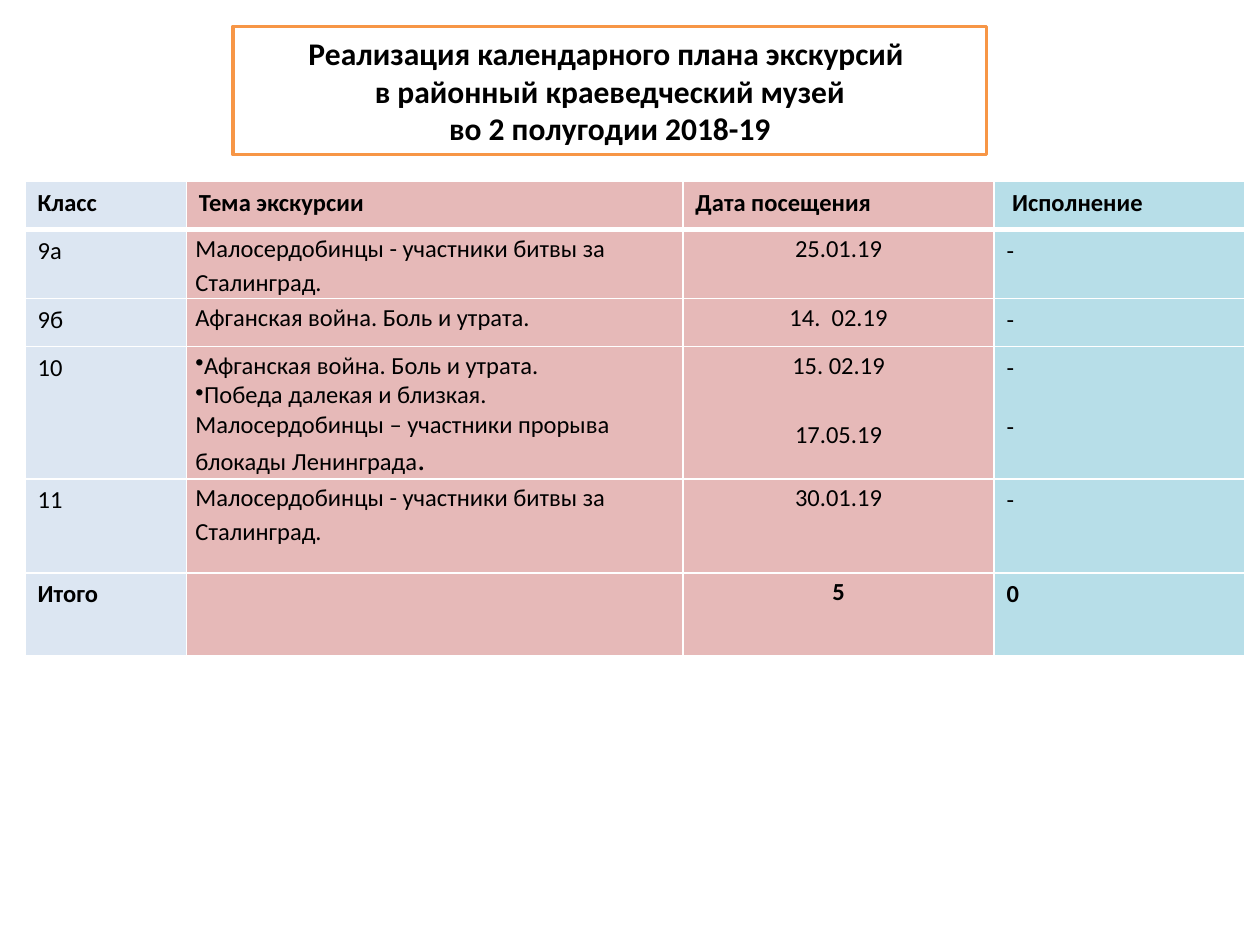
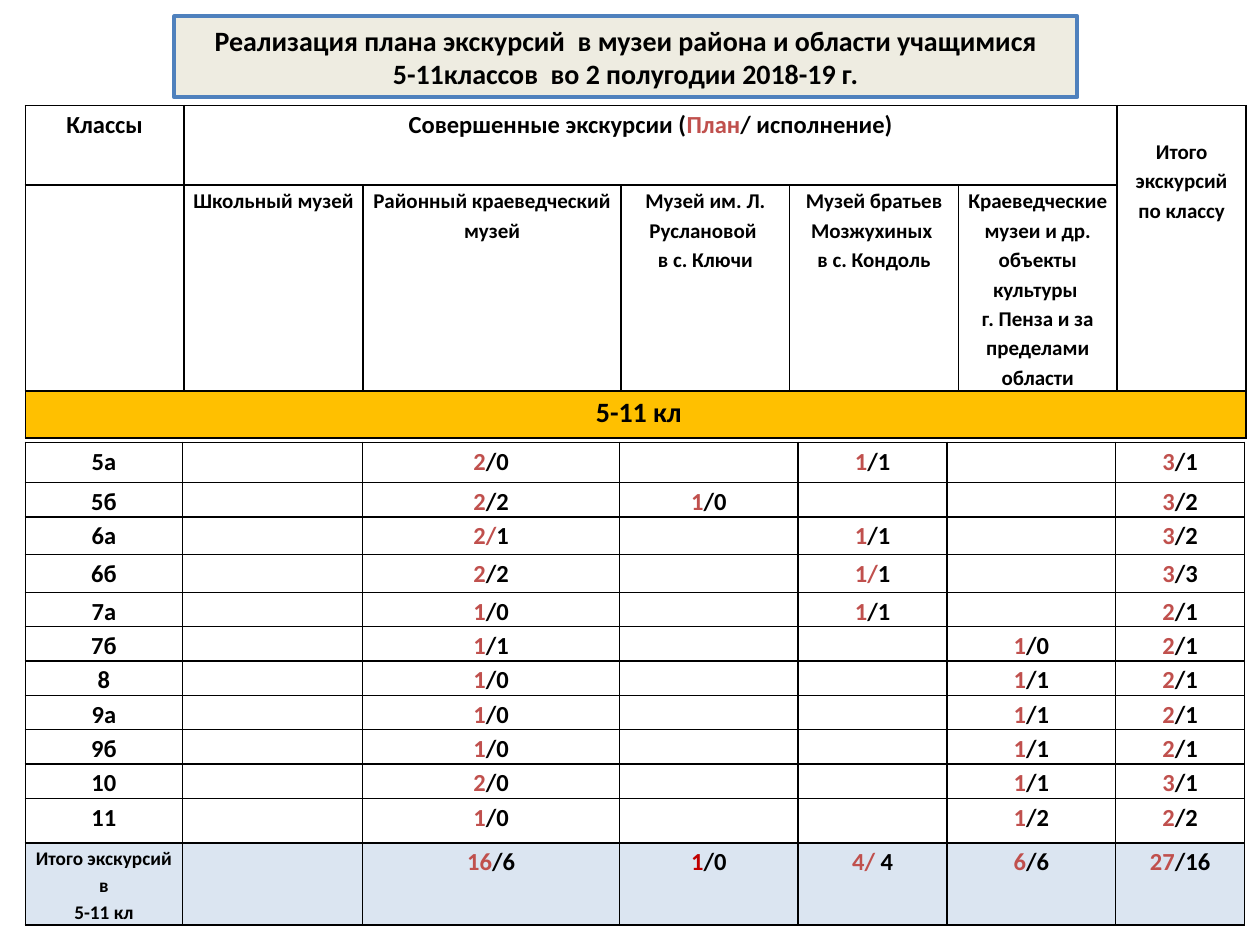
from dataclasses import dataclass

from lxml.etree import SubElement
from pptx import Presentation
from pptx.dml.color import RGBColor as Rgb
from pptx.enum.text import MSO_ANCHOR as Anchor, MSO_AUTO_SIZE as AutoSize, PP_ALIGN as Align
from pptx.oxml.ns import qn
from pptx.util import Cm, Pt


@dataclass(frozen=True)
class Theme:
    font: str = "Calibri"
    ink: str = "000000"
    paper: str = "FFFFFF"
    plan: str = "C0504D"
    plan_strong: str = "C00000"
    orange: str = "F79646"
    blue: str = "4F81BD"
    cream: str = "EEECE1"
    class_fill: str = "DCE6F2"
    visit_fill: str = "E6B9B8"
    done_fill: str = "B7DEE8"
    band_fill: str = "FFC000"
    total_fill: str = "DBE5F1"
    heading: int = 18
    subheading: int = 16
    body: int = 14
    label: int = 12
    small: int = 11


THEME = Theme()
GRID_LEFT = 0.51


def add_heading(slide, box, lines, size, fill, line, line_width):
    title = slide.shapes.title
    for side, length in zip(("left", "top", "width", "height"), box):
        setattr(title, side, Cm(length))
    title.fill.solid()
    title.fill.fore_color.rgb = Rgb.from_string(fill)
    title.line.color.rgb = Rgb.from_string(line)
    title.line.width = Pt(line_width)
    frame = title.text_frame
    frame.text = "\n".join(lines)
    frame.auto_size = AutoSize.NONE
    frame.vertical_anchor = Anchor.MIDDLE
    for paragraph in frame.paragraphs:
        paragraph.alignment = Align.CENTER
        for name, value in {"name": THEME.font, "size": Pt(size), "bold": True}.items():
            setattr(paragraph.font, name, value)
            setattr(paragraph.runs[0].font, name, value)
        paragraph.runs[0].font.color.rgb = Rgb.from_string(THEME.ink)


def add_grid(slide, top, widths, heights, rows, border, style_of):
    """Add a table; style_of(row, column) overrides the cell defaults, and
    text between bars is set in the plan colour."""
    frame = slide.shapes.add_table(len(rows), len(widths), Cm(GRID_LEFT), Cm(top),
                                   Cm(sum(widths)), Cm(sum(heights)))
    grid = frame.table
    grid.first_row = grid.horz_banding = False
    for column, width in zip(grid.columns, widths):
        column.width = Cm(width)
    for row, height in zip(grid.rows, heights):
        row.height = Cm(height)

    for r, texts in enumerate(rows):
        for c, text in enumerate(texts):
            style = {"size": THEME.body, "bold": True, "align": Align.CENTER, "spacing": 1.15,
                     "margins": (0.13, 0, 0.13, 0), "fill": None, "gap": 0,
                     "top_line": 1, "bottom_line": 1} | style_of(r, c)
            cell = grid.cell(r, c)
            for side, margin in zip(("left", "top", "right", "bottom"), style["margins"]):
                setattr(cell, f"margin_{side}", Cm(margin))
            properties = cell._tc.get_or_add_tcPr()
            edges = {"a:lnL": 1, "a:lnR": 1, "a:lnT": style["top_line"], "a:lnB": style["bottom_line"]}
            for tag, width in edges.items():
                edge = SubElement(properties, qn(tag), w=str(Pt(width)))
                SubElement(SubElement(edge, qn("a:solidFill")), qn("a:srgbClr"), val=border)
            if style["fill"]:
                cell.fill.solid()
                cell.fill.fore_color.rgb = Rgb.from_string(style["fill"])
            else:
                cell.fill.background()

            for i, line in enumerate(text.split("\n")):
                paragraph = cell.text_frame.add_paragraph() if i else cell.text_frame.paragraphs[0]
                paragraph.alignment = style["align"]
                paragraph.line_spacing = style["spacing"]
                if i and style["gap"]:
                    paragraph.space_before = Pt(style["gap"])
                if not line:
                    SubElement(paragraph._p, qn("a:endParaRPr"), sz=str(style["size"] * 100))
                    continue
                for part, words in enumerate(line.split("|")):
                    if words:
                        run = paragraph.add_run()
                        run.text = words
                        run.font.color.rgb = Rgb.from_string(THEME.plan if part % 2 else THEME.ink)
                        for name, value in {"name": THEME.font, "size": Pt(style["size"]),
                                            "bold": style["bold"]}.items():
                            setattr(run.font, name, value)
    return grid


deck = Presentation()
deck.slide_width, deck.slide_height = Cm(25.4), Cm(19.05)
title_only = deck.slide_layouts[5]

# Slide 1: visits to the district museum
district = deck.slides.add_slide(title_only)
add_heading(district, (4.7, 0.53, 15.19, 2.59),
            ["Реализация календарного плана экскурсий ", "в районный краеведческий музей",
             "во 2 полугодии 2018-19"],
            THEME.heading, THEME.paper, THEME.orange, 2)

visits = [
    ["Класс", "Тема экскурсии", "Дата посещения", " Исполнение"],
    ["9а", "Малосердобинцы - участники битвы за Сталинград.", "25.01.19", "-"],
    ["9б", "Афганская война. Боль и утрата.", "14.  02.19", "-"],
    ["10", "Афганская война. Боль и утрата.\nПобеда далекая и близкая. "
           "Малосердобинцы – участники прорыва блокады Ленинграда", "15. 02.19\n17.05.19", "-\n-"],
    ["11", "Малосердобинцы - участники битвы за Сталинград.", "30.01.19", "-"],
    ["Итого", "", "5", "0"],
]
visit_fills = [THEME.class_fill, THEME.visit_fill, THEME.visit_fill, THEME.done_fill]


def visit_style(r, c):
    inner = r > 0 and c in (1, 2)
    return {
        "bold": r in (0, len(visits) - 1),
        "align": Align.CENTER if inner and c == 2 else Align.LEFT,
        "spacing": 1.15 if inner else 1.0,
        "margins": (0.18, 0, 0.18, 0) if inner else (0.25, 0.13, 0.25, 0.13),
        "fill": visit_fills[c],
        "gap": {2: 20, 3: 17}.get(c, 0),
        "top_line": 3 if r == 1 else 1,
        "bottom_line": 3 if r == 0 else 1,
    }


visit_grid = add_grid(district, 3.66, [3.25, 10.01, 6.27, 5.06], [0.97, 1.37, 0.97, 2.66, 1.9, 1.67],
                      visits, THEME.paper, visit_style)
topics = visit_grid.cell(3, 1).text_frame.paragraphs
topics[1].line_spacing = 1.0
for topic in topics:
    indents = topic._p.get_or_add_pPr()
    indents.set("marL", "0")
    indents.set("indent", "0")
    SubElement(indents, qn("a:buChar"), char="•")
full_stop = topics[1].add_run()
full_stop.text = "."
full_stop.font.name, full_stop.font.size = THEME.font, Pt(THEME.heading)
full_stop.font.color.rgb = Rgb.from_string(THEME.ink)

# Slide 2: plan and completion for all classes
summary = deck.slides.add_slide(title_only)
add_heading(summary, (3.51, 0.33, 18.21, 1.63),
            ["Реализация плана экскурсий  в музеи района и области учащимися",
             "5-11классов  во 2 полугодии 2018-19 г."],
            THEME.subheading, THEME.cream, THEME.blue, 2.25)

museums = [
    ["Классы", "Совершенные экскурсии (|План|/ исполнение)", "", "", "", "", "Итого экскурсий по классу"],
    ["", "Школьный музей", "Районный краеведческий музей", "Музей им. Л. Руслановой \nв с. Ключи",
     "Музей братьев Мозжухиных \nв с. Кондоль",
     "Краеведческие музеи и др. объекты культуры \nг. Пенза и за пределами области", ""],
    [" 5-11 кл", "", "", "", "", "", ""],
]
museum_styles = {(0, 6): {"size": THEME.label, "margins": (0.13, 0.6, 0.13, 0)}}
museum_styles |= {(1, c): {"size": THEME.label} for c in range(7)}
museum_styles |= {(2, c): {"size": THEME.subheading, "fill": THEME.band_fill} for c in range(7)}
museum_grid = add_grid(summary, 2.13, [3.2, 3.61, 5.2, 3.4, 3.4, 3.2, 2.6], [1.6, 4.09, 0.95],
                       museums, THEME.ink, lambda r, c: museum_styles.get((r, c), {}))
for first, last in [((0, 1), (0, 5)), ((0, 6), (1, 6)), ((2, 0), (2, 6))]:
    museum_grid.cell(*first).merge(museum_grid.cell(*last))

results = [
    ["5а", "", "|2|/0", "", "|1|/1", "", "|3|/1"],
    ["5б", "", "|2|/2", "|1|/0", "", "", "|3|/2"],
    ["6а", "", "|2/|1", "", "|1|/1", "", "|3|/2"],
    ["6б", "", "|2|/2", "", "|1/|1", "", "|3|/3"],
    ["7а", "", "|1|/0", "", "|1|/1", "", "|2|/1"],
    ["7б", "", "|1|/1", "", "", "|1|/0", "|2|/1"],
    ["8", "", "|1|/0", "", "", "|1|/1", "|2|/1"],
    ["9а", "", "|1|/0", "", "", "|1|/1", "|2|/1"],
    ["9б", "", "|1|/0", "", "", "|1|/1", "|2|/1"],
    ["10", "", "|2|/0", "", "", "|1|/1", "|3|/1"],
    ["11", "", "|1|/0", "", "", "|1|/2", "|2|/2"],
    ["Итого экскурсий в\n5-11 кл", "", "|16|/6", "|1|/0", "|4/ |4", "|6|/6", "|27|/16"],
]
total_row = len(results) - 1
result_grid = add_grid(
    summary, 8.92, [3.17, 3.63, 5.18, 3.6, 3.0, 3.4, 2.6],
    [0.81, 0.69, 0.76, 0.76] + [0.69] * 6 + [0.9, 1.62], results, THEME.ink,
    lambda r, c: {"size": THEME.small if (r, c) == (total_row, 0) else THEME.body,
                  "fill": THEME.total_fill if r == total_row else None})
village_total = result_grid.cell(total_row, 3).text_frame.paragraphs[0].runs[0]
village_total.font.color.rgb = Rgb.from_string(THEME.plan_strong)

deck.save("out.pptx")
